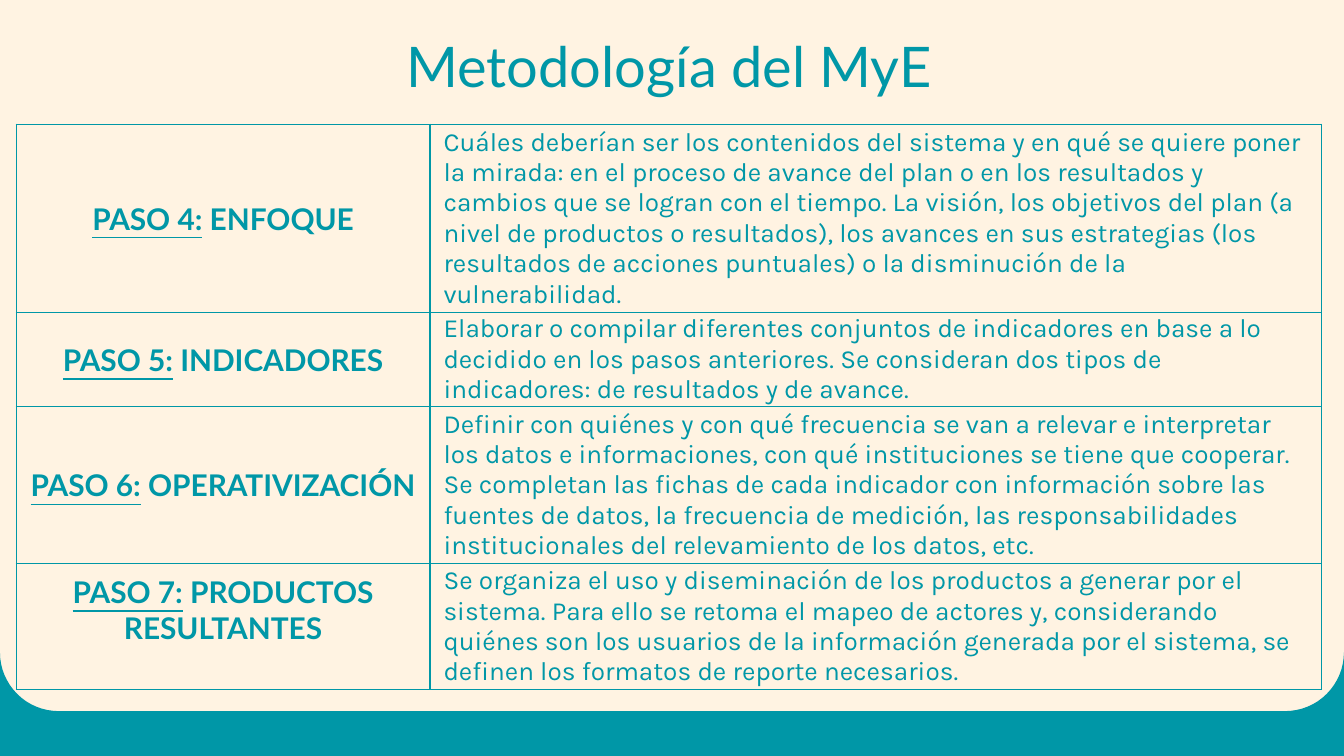
from dataclasses import dataclass
from math import cos, pi, sin

from lxml.etree import SubElement
from pptx import Presentation
from pptx.dml.color import RGBColor
from pptx.enum.text import MSO_ANCHOR, PP_ALIGN
from pptx.oxml.ns import qn
from pptx.util import Pt

TEAL, CREAM = "0097A7", "FFF3E2"
WIDE, HIGH = 720, 405

TITLE = {"name": "Lato", "size": Pt(30), "bold": False}
HEAD = {"name": "Lato", "size": Pt(16), "bold": True}
BODY = {"name": "Karla", "size": Pt(14), "bold": False}


@dataclass
class Step:
    label: str
    name: str
    text: str
    foot: float = 0  # space below the heading


STEPS = [
    Step("PASO 4:", "ENFOQUE",
         "Cuáles deberían ser los contenidos del sistema y en qué se quiere poner la mirada: "
         "en el proceso de avance del plan o en los resultados y cambios que se logran con el "
         "tiempo. La visión, los objetivos del plan (a nivel de productos o resultados), los "
         "avances en sus estrategias (los resultados de acciones puntuales) o la disminución "
         "de la vulnerabilidad."),
    Step("PASO 5:", "INDICADORES",
         "Elaborar o compilar diferentes conjuntos de indicadores en base a lo decidido en los "
         "pasos anteriores. Se consideran dos tipos de indicadores: de resultados y de avance."),
    Step("PASO 6:", "OPERATIVIZACIÓN",
         "Definir con quiénes y con qué frecuencia se van a relevar e interpretar los datos e "
         "informaciones, con qué instituciones se tiene que cooperar. Se completan las fichas "
         "de cada indicador con información sobre las fuentes de datos, la frecuencia de "
         "medición, las responsabilidades institucionales del relevamiento de los datos, etc."),
    Step("PASO 7:", "PRODUCTOS RESULTANTES",
         "Se organiza el uso y diseminación de los productos a generar por el sistema. Para "
         "ello se retoma el mapeo de actores y, considerando quiénes son los usuarios de la "
         "información generada por el sistema, se definen los formatos de reporte necesarios.",
         foot=18),
]


def tint(code: str) -> RGBColor:
    return RGBColor.from_string(code)


def write(para, text: str, form: dict, line: bool = False) -> None:
    run = para.add_run()
    run.text = text
    for key, val in form.items():
        setattr(run.font, key, val)
    run.font.underline = line
    run.font.color.rgb = tint(TEAL)


def frame(cell) -> None:
    """Clear the fill, set the insets and draw the four borders."""
    look = {"vertical_anchor": MSO_ANCHOR.MIDDLE, "margin_left": Pt(7.2),
            "margin_right": Pt(7.2), "margin_top": 0, "margin_bottom": 0}
    for key, val in look.items():
        setattr(cell, key, val)
    props = cell._tc.get_or_add_tcPr()
    for side in ("lnL", "lnR", "lnT", "lnB"):
        edge = SubElement(props, qn(f"a:{side}"), w=str(Pt(0.75)))
        fill = SubElement(edge, qn("a:solidFill"))
        SubElement(fill, qn("a:srgbClr"), val=TEAL)
    cell.fill.background()


def band(slide) -> None:
    """Bottom band whose upper edge turns up in a rounded corner at each end."""
    rad, base = 31.5, 381
    turn = [i * pi / 32 for i in range(17)]
    left = [(rad - rad * cos(a), base - rad + rad * sin(a)) for a in turn]
    right = [(WIDE - x, y) for x, y in reversed(left)]
    pen = slide.shapes.build_freeform(0, Pt(HIGH), scale=1.0)
    spots = left + right + [(WIDE, HIGH)]
    pen.add_line_segments([(Pt(x), Pt(y)) for x, y in spots], close=True)
    shape = pen.convert_to_shape()
    shape.shadow.inherit = False
    shape.fill.solid()
    shape.fill.fore_color.rgb = tint(TEAL)
    shape.line.fill.background()


def title(slide, text: str) -> None:
    box = slide.shapes.add_textbox(Pt(55), Pt(9.6), Pt(607), Pt(45.36)).text_frame
    box.word_wrap = True
    for side in ("left", "right", "top", "bottom"):
        setattr(box, f"margin_{side}", Pt(7.2))
    para = box.paragraphs[0]
    para.alignment = PP_ALIGN.CENTER
    write(para, text, TITLE)


def grid(slide, steps: list[Step]) -> None:
    cols, row, tall = (221.76, 477.36), 46.08, 302.4
    holder = slide.shapes.add_table(len(steps), 2, Pt(8.64), Pt(66.6),
                                    Pt(sum(cols)), Pt(tall))
    table = holder.table
    table.first_row = table.horz_banding = False
    for col, wide in zip(table.columns, cols):
        col.width = Pt(wide)
    for i, step in enumerate(steps):
        table.rows[i].height = Pt(row)
        head, body = table.cell(i, 0), table.cell(i, 1)
        for cell in (head, body):
            frame(cell)
        head.margin_bottom = Pt(step.foot)
        para = head.text_frame.paragraphs[0]
        para.alignment = PP_ALIGN.CENTER
        write(para, step.label, HEAD, line=True)
        write(para, f" {step.name}", HEAD)
        para = body.text_frame.paragraphs[0]
        para.space_after = Pt(16)
        write(para, step.text, BODY)
    # Rows grow with their text, so the frame is taller than their sum
    holder.height = Pt(tall)


def main() -> None:
    deck = Presentation()
    deck.slide_width, deck.slide_height = Pt(WIDE), Pt(HIGH)
    slide = deck.slides.add_slide(deck.slide_layouts[6])

    # Background
    slide.background.fill.solid()
    slide.background.fill.fore_color.rgb = tint(CREAM)
    band(slide)

    # Title and table of steps
    title(slide, "Metodología del MyE")
    grid(slide, STEPS)
    deck.save("out.pptx")


if __name__ == "__main__":
    main()
